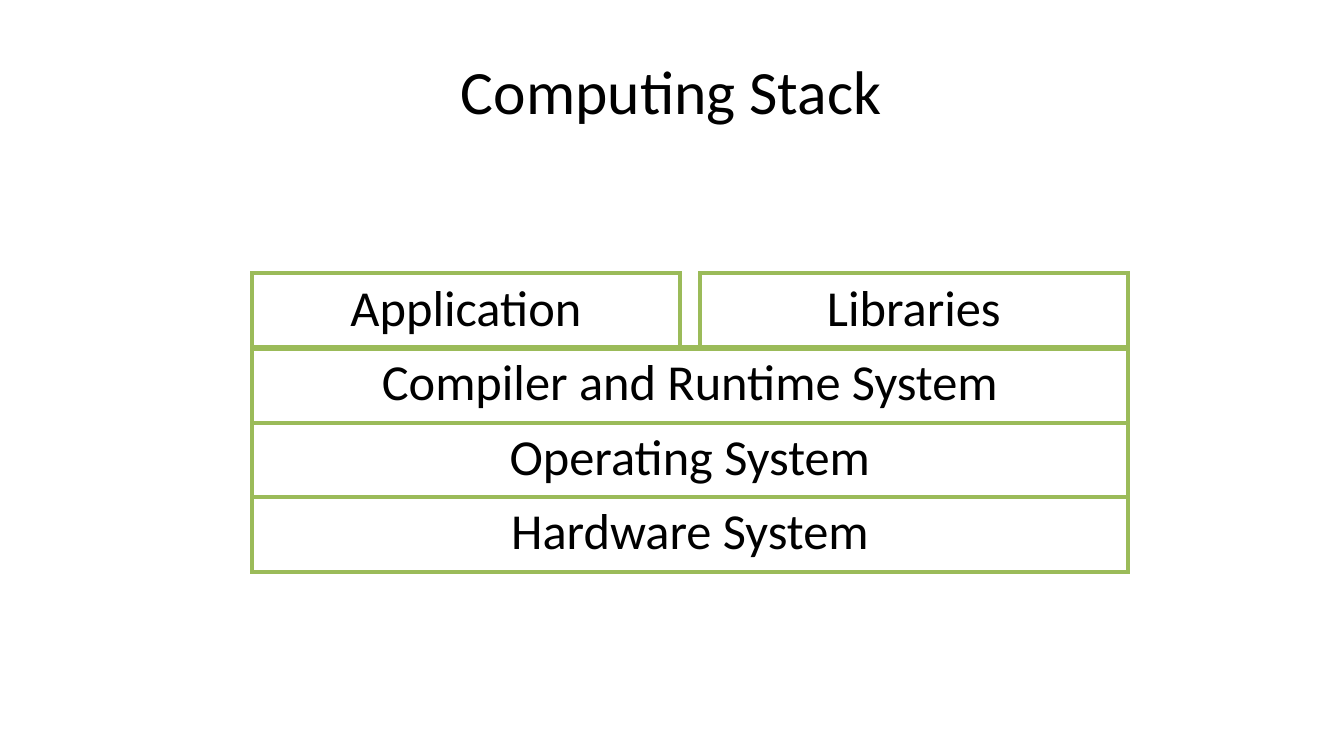
from dataclasses import dataclass

from lxml.etree import SubElement
from pptx import Presentation
from pptx.dml.color import RGBColor
from pptx.enum.text import MSO_ANCHOR, MSO_AUTO_SIZE, PP_ALIGN
from pptx.oxml.ns import qn
from pptx.table import Table, _Cell
from pptx.text.text import TextFrame
from pptx.util import Emu, Pt

BLACK = RGBColor(0x00, 0x00, 0x00)
WHITE = RGBColor(0xFF, 0xFF, 0xFF)
GREEN = RGBColor(0x9B, 0xBB, 0x59)
FONT = "Calibri"
THIN, THICK = 3, 4.5
COL_WIDTHS = (428, 20, 428)
ROW_HEIGHTS = (75, 75, 74, 75)


@dataclass(frozen=True)
class Layer:
    text: str
    row: int
    col: int = 0
    span: int = 1
    top: float = THIN
    bottom: float = THIN
    side: float = THIN
    fill: RGBColor | None = None


LAYERS = (
    Layer("Application", 0, bottom=THICK),
    Layer("", 0, col=1, top=0, bottom=THICK),
    Layer("Libraries", 0, col=2, bottom=THICK),
    Layer("Compiler and Runtime System", 1, span=3, top=THICK),
    Layer("Operating System", 2, span=3),
    Layer("Hardware System", 3, span=3, fill=WHITE),
)


def px(n: int) -> Emu:
    return Emu(round(n * 914400 / 100.8))


def write(tf: TextFrame, text: str, size: int) -> None:
    tf.text = text
    p = tf.paragraphs[0]
    p.alignment = PP_ALIGN.CENTER
    p.font.name = FONT
    p.font.size = Pt(size)
    p.font.bold = False
    p.font.color.rgb = BLACK


def add_border(cell: _Cell, edge: str, width: float) -> None:
    """Rule one edge of a cell; a width of 0 leaves it bare."""
    ln = SubElement(cell._tc.get_or_add_tcPr(), qn(f"a:ln{edge}"), w=str(Pt(width)))
    if width:
        fill = SubElement(ln, qn("a:solidFill"))
        SubElement(fill, qn("a:srgbClr"), val=str(GREEN))
    else:
        SubElement(ln, qn("a:noFill"))


def fill_layer(table: Table, layer: Layer) -> None:
    cell = table.cell(layer.row, layer.col)
    if layer.span > 1:
        cell.merge(table.cell(layer.row, layer.col + layer.span - 1))
    cell.margin_left = cell.margin_right = cell.margin_bottom = 0
    cell.margin_top = px(5)
    widths = {"L": layer.side, "R": layer.side, "T": layer.top, "B": layer.bottom}
    for edge, width in widths.items():
        add_border(cell, edge, width)
    if layer.fill is None:
        cell.fill.background()
    else:
        cell.fill.solid()
        cell.fill.fore_color.rgb = layer.fill
    if layer.text:
        write(cell.text_frame, layer.text, 36)


def main() -> None:
    prs = Presentation()
    prs.slide_width, prs.slide_height = px(1344), px(756)
    s = prs.slides.add_slide(prs.slide_layouts[5])

    title = s.shapes.title
    title.left, title.top, title.width, title.height = px(57), px(36), px(1229), px(111)
    tf = title.text_frame
    tf.auto_size = MSO_AUTO_SIZE.NONE
    tf.vertical_anchor = MSO_ANCHOR.TOP
    tf.margin_left = tf.margin_right = tf.margin_bottom = 0
    tf.margin_top = px(17)
    write(tf, "Computing Stack", 44)

    table = s.shapes.add_table(
        len(ROW_HEIGHTS), len(COL_WIDTHS), px(252), px(273),
        px(sum(COL_WIDTHS)), px(sum(ROW_HEIGHTS)),
    ).table
    table.first_row = table.horz_banding = False
    for column, width in zip(table.columns, COL_WIDTHS):
        column.width = px(width)
    for row, height in zip(table.rows, ROW_HEIGHTS):
        row.height = px(height)
    for layer in LAYERS:
        fill_layer(table, layer)

    prs.save("out.pptx")


if __name__ == "__main__":
    main()
